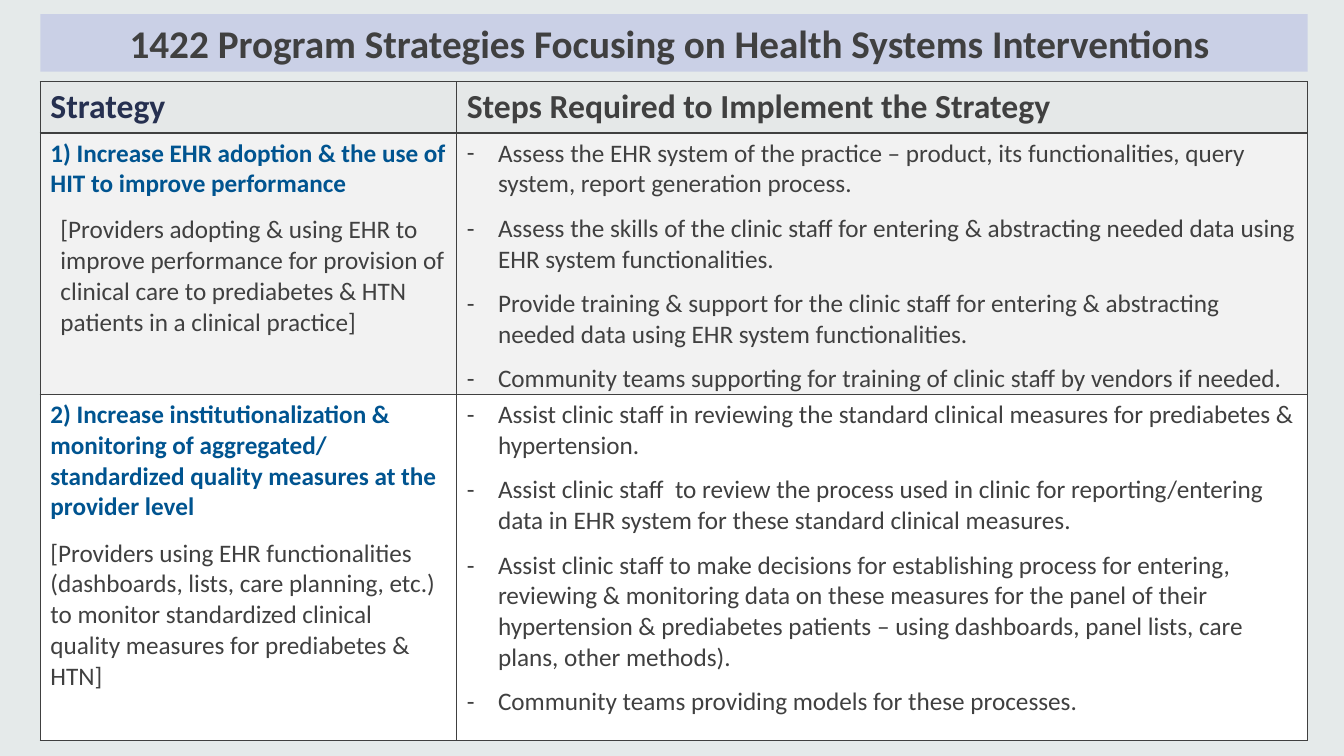
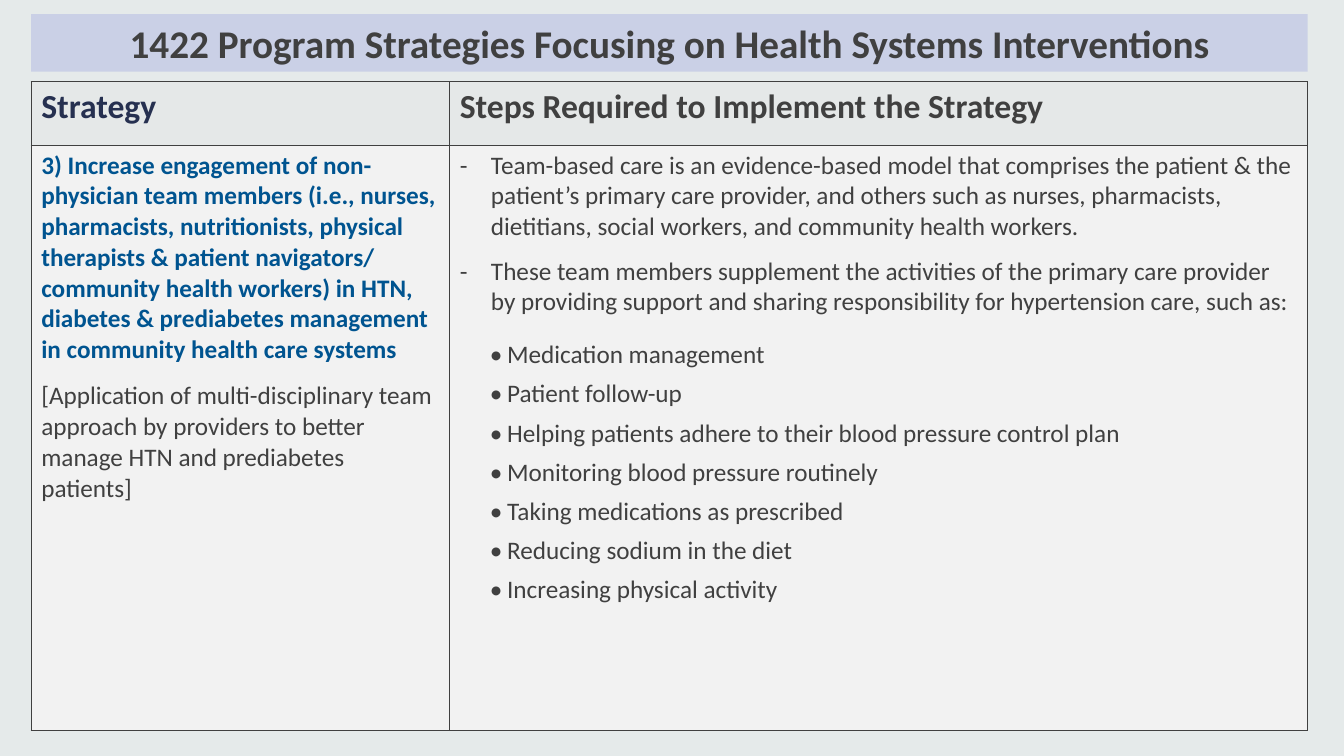
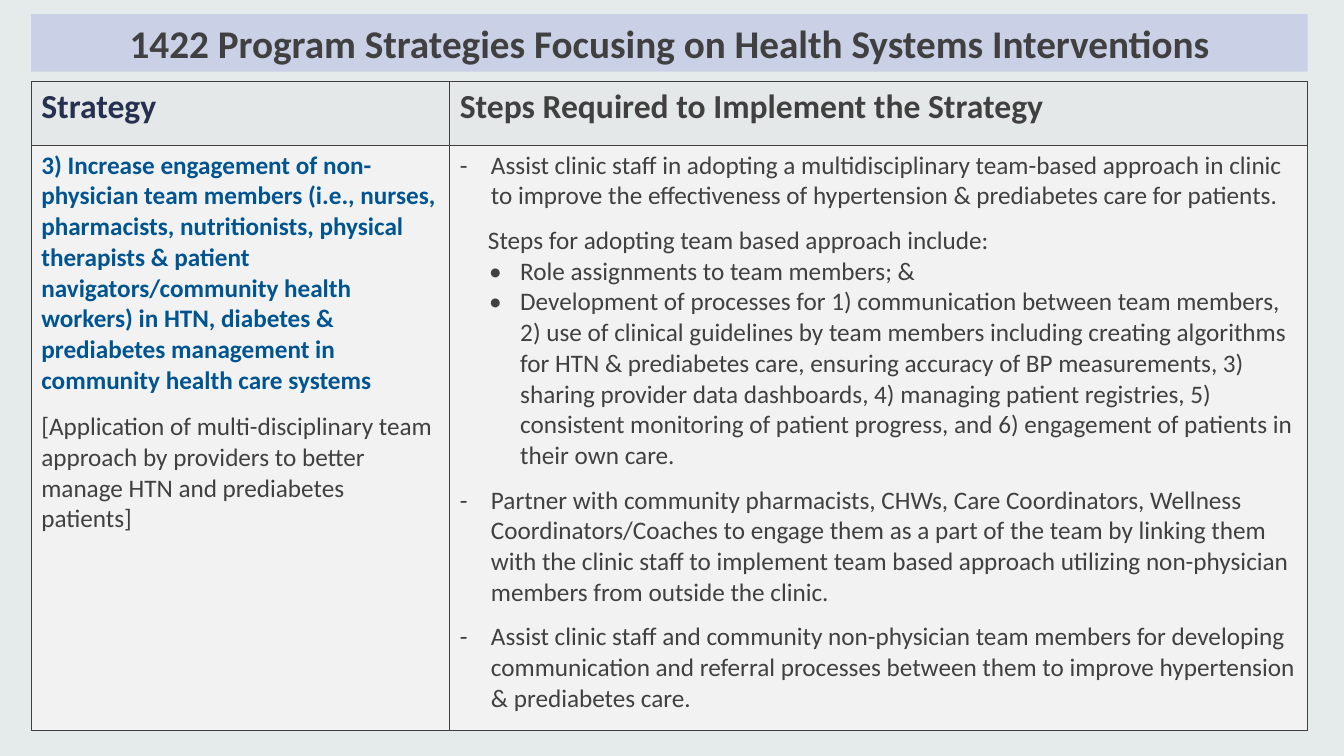
from lxml import etree
from pptx import Presentation
from pptx import util as u
from pptx.dml.color import RGBColor
from pptx.enum import shapes, text
from pptx.oxml.ns import qn

COLORS = {
    "page": "E5EAEA", "band": "CAD0E6", "header": "E5E8E8", "gray": "F2F2F2",
    "white": "FFFFFF", "text": "404040", "navy": "263050", "blue": "005490",
}
FONT = "Calibri"
TITLE = "1422 Program Strategies Focusing on Health Systems Interventions"
HEADERS = [("Strategy", "navy"), ("Steps Required to Implement the Strategy", "text")]
RIGHT_EDGE = 12.97
CENTERED_LEFT = 0.31

STYLES = {
    "strategy": {"bold": True, "color": "blue"},
    "summary": {"before": 11},
    "inset summary": {"before": 11, "left": 0.1},
    "step": {"before": 9.8, "left": 0.31, "hang": 0.31, "bullet": "-"},
    "lead-in": {"before": 9.8, "left": 0.28},
    "detail": {"left": 0.6, "hang": 0.31, "bullet": "•"},
    "first activity": {"before": 15.8, "left": 0.47, "hang": 0.17, "bullet": "•"},
    "activity": {"before": 6, "left": 0.47, "hang": 0.17, "bullet": "•"},
}

TEAM_SUMMARY = ("summary", "[Application of multi-disciplinary team approach by providers to better manage HTN and prediabetes patients]")

SLIDES = [
    {
        "left": 0.4, "strategy_width": 4.13, "heights": [0.51, 2.59, 3.43],
        "rows": [
            ("gray", [
                ("strategy", "1) Increase EHR adoption & the use of HIT to improve performance"),
                ("inset summary", "[Providers adopting & using EHR to improve performance for provision of clinical care to prediabetes & HTN patients in a clinical practice]"),
            ], [
                ("step", "Assess the EHR system of the practice – product, its functionalities, query system, report generation process."),
                ("step", "Assess the skills of the clinic staff for entering & abstracting needed data using EHR system functionalities."),
                ("step", "Provide training & support for the clinic staff for entering & abstracting needed data using EHR system functionalities."),
                ("step", "Community teams supporting for training of clinic staff by vendors if needed."),
            ]),
            ("white", [
                ("strategy", "2) Increase institutionalization & monitoring of aggregated/ standardized quality measures at the provider level"),
                ("summary", "[Providers using EHR functionalities (dashboards, lists, care planning, etc.) to monitor standardized clinical quality measures for prediabetes & HTN]"),
            ], [
                ("step", "Assist clinic staff in reviewing the standard clinical measures for prediabetes & hypertension."),
                ("step", "Assist clinic staff  to review the process used in clinic for reporting/entering data in EHR system for these standard clinical measures."),
                ("step", "Assist clinic staff to make decisions for establishing process for entering, reviewing & monitoring data on these measures for the panel of their hypertension & prediabetes patients – using dashboards, panel lists, care plans, other methods)."),
                ("step", "Community teams providing models for these processes."),
            ]),
        ],
    },
    {
        "left": 0.31, "strategy_width": 4.15, "heights": [0.63, 5.81],
        "rows": [
            ("gray", [
                ("strategy", "3) Increase engagement of non-physician team members (i.e., nurses, pharmacists, nutritionists, physical therapists & patient navigators/ community health workers) in HTN, diabetes & prediabetes management in community health care systems"),
                TEAM_SUMMARY,
            ], [
                ("step", "Team-based care is an evidence-based model that comprises the patient & the patient’s primary care provider, and others such as nurses, pharmacists, dietitians, social workers, and community health workers."),
                ("step", "These team members supplement the activities of the primary care provider by providing support and sharing responsibility for hypertension care, such as:"),
                ("first activity", "Medication management"),
                ("activity", "Patient follow-up"),
                ("activity", "Helping patients adhere to their blood pressure control plan"),
                ("activity", "Monitoring blood pressure routinely"),
                ("activity", "Taking medications as prescribed"),
                ("activity", "Reducing sodium in the diet"),
                ("activity", "Increasing physical activity"),
            ]),
        ],
    },
    {
        "left": 0.31, "strategy_width": 4.15, "heights": [0.63, 5.81],
        "rows": [
            ("gray", [
                ("strategy", "3) Increase engagement of non-physician team members (i.e., nurses, pharmacists, nutritionists, physical therapists & patient navigators/community health workers) in HTN, diabetes & prediabetes management in community health care systems"),
                TEAM_SUMMARY,
            ], [
                ("step", "Assist clinic staff in adopting a multidisciplinary team-based approach in clinic to improve the effectiveness of hypertension & prediabetes care for patients."),
                ("lead-in", "Steps for adopting team based approach include:"),
                ("detail", "Role assignments to team members; &"),
                ("detail", "Development of processes for 1) communication between team members, 2) use of clinical guidelines by team members including creating algorithms for HTN & prediabetes care, ensuring accuracy of BP measurements, 3) sharing provider data dashboards, 4) managing patient registries, 5) consistent monitoring of patient progress, and 6) engagement of patients in their own care."),
                ("step", "Partner with community pharmacists, CHWs, Care Coordinators, Wellness Coordinators/Coaches to engage them as a part of the team by linking them with the clinic staff to implement team based approach utilizing non-physician members from outside the clinic."),
                ("step", "Assist clinic staff and community non-physician team members for developing communication and referral processes between them to improve hypertension & prediabetes care."),
            ]),
        ],
    },
]


def write(para, words, size, color, bold):
    para.text = words
    for span in para.runs:
        span.font.name = FONT
        span.font.size = u.Pt(size)
        span.font.bold = bold
        span.font.color.rgb = RGBColor.from_string(COLORS[color])


def dress_cell(cell, fill):
    properties = cell._tc.get_or_add_tcPr()
    for side in ("lnL", "lnR", "lnT", "lnB"):
        line = etree.SubElement(properties, qn("a:" + side), w=str(u.Pt(1)))
        paint = etree.SubElement(line, qn("a:solidFill"))
        etree.SubElement(paint, qn("a:srgbClr"), val=COLORS["text"])
    cell.fill.solid()
    cell.fill.fore_color.rgb = RGBColor.from_string(COLORS[fill])
    cell.margin_bottom = 0


deck = Presentation()
deck.slide_width = u.Inches(13.33)
deck.slide_height = u.Inches(7.5)

for content in SLIDES:
    page = deck.slides.add_slide(deck.slide_layouts[6])
    page.background.fill.solid()
    page.background.fill.fore_color.rgb = RGBColor.from_string(COLORS["page"])
    left = content["left"]
    width = RIGHT_EDGE - left

    band = page.shapes.add_shape(shapes.MSO_SHAPE.RECTANGLE, u.Inches(left), u.Inches(0.14), u.Inches(width), u.Inches(0.57))
    band.shadow.inherit = False
    band.fill.solid()
    band.fill.fore_color.rgb = RGBColor.from_string(COLORS["band"])
    band.line.fill.background()
    frame = band.text_frame
    frame.word_wrap = True
    frame.vertical_anchor = text.MSO_ANCHOR.MIDDLE
    frame.margin_right = u.Inches(0.1 + left - CENTERED_LEFT)
    write(frame.paragraphs[0], TITLE, 28, "text", True)
    frame.paragraphs[0].alignment = text.PP_ALIGN.CENTER

    heights = content["heights"]
    table = page.shapes.add_table(len(heights), 2, u.Inches(left), u.Inches(0.81), u.Inches(width), u.Inches(sum(heights))).table
    table.horz_banding = False
    table.columns[0].width = u.Inches(content["strategy_width"])
    table.columns[1].width = u.Inches(width - content["strategy_width"])
    for row, height in zip(table.rows, heights):
        row.height = u.Inches(height)

    for column, (words, color) in enumerate(HEADERS):
        cell = table.cell(0, column)
        dress_cell(cell, "header")
        write(cell.text_frame.paragraphs[0], words, 24, color, True)

    for row_number, (fill, *columns) in enumerate(content["rows"], 1):
        for column, entries in enumerate(columns):
            cell = table.cell(row_number, column)
            dress_cell(cell, fill)
            for position, (kind, words) in enumerate(entries):
                style = STYLES[kind]
                frame = cell.text_frame
                para = frame.add_paragraph() if position else frame.paragraphs[0]
                write(para, words, 18, style.get("color", "text"), style.get("bold", False))
                para.space_before = u.Pt(style.get("before", 0) if position else 0)
                settings = para._p.get_or_add_pPr()
                settings.set("marL", str(u.Inches(style.get("left", 0))))
                settings.set("indent", str(-u.Inches(style.get("hang", 0))))
                if "bullet" in style:
                    etree.SubElement(settings, qn("a:buFont"), typeface=FONT)
                    etree.SubElement(settings, qn("a:buChar"), char=style["bullet"])

deck.save("out.pptx")
